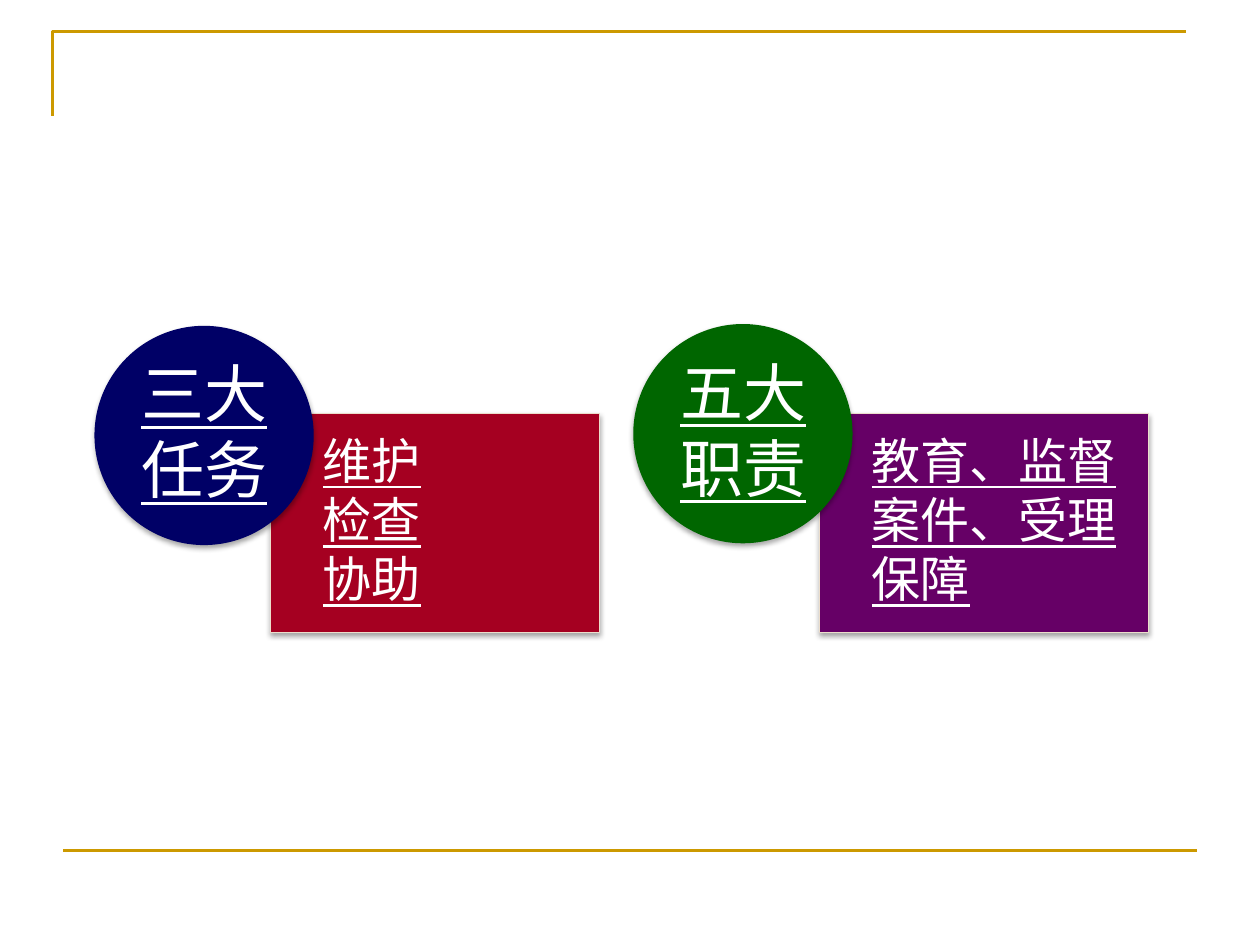
from lxml.etree import SubElement
from pptx import Presentation
from pptx.dml.color import RGBColor
from pptx.enum.shapes import MSO_CONNECTOR, MSO_SHAPE
from pptx.enum.text import MSO_ANCHOR, PP_ALIGN
from pptx.oxml.ns import qn
from pptx.util import Pt

COLORS = {
    "gold": "CC9900", "border": "ECDECC", "white": "FFFFFF", "shadow": "000000",
    "red": "A50021", "navy": "000066", "purple": "660066", "green": "006600",
}
FONT = "Noto Sans CJK SC"
DISC = 125.3
PANEL_WIDTH, PANEL_TOP = 188, 236.2


def color(name):
    """Return the named palette colour."""
    return RGBColor.from_string(COLORS[name])


def style_line(line, name, width):
    """Give a line its colour and width."""
    line.color.rgb = color(name)
    line.width = Pt(width)


def add_corner(slide):
    """Draw the open corner rule at the top left."""
    builder = slide.shapes.build_freeform(Pt(30), Pt(66.2))
    builder.add_line_segments([(Pt(30), Pt(18)), (Pt(678), Pt(18))], close=False)
    shape = builder.convert_to_shape()
    shape.shadow.inherit = False
    shape.fill.background()
    style_line(shape.line, "gold", 1.5)


def add_rule(slide):
    """Draw the horizontal rule at the foot."""
    rule = slide.shapes.add_connector(
        MSO_CONNECTOR.STRAIGHT, Pt(36), Pt(486), Pt(684), Pt(486))
    style_line(rule.line, "gold", 1.5)
    SubElement(rule._element.spPr, qn("a:effectLst"))


def add_shadow(shape):
    """Put a soft shadow below a shape."""
    shape.shadow.inherit = False
    effects = shape._element.spPr.find(qn("a:effectLst"))
    shadow = SubElement(effects, qn("a:outerShdw"), blurRad=str(Pt(3.1)),
                        dist=str(Pt(1.8)), dir="5400000", rotWithShape="0")
    shade = SubElement(shadow, qn("a:srgbClr"), val=COLORS["shadow"])
    SubElement(shade, qn("a:alpha"), val="35000")


def add_block(slide, kind, left, top, width, fill, border=None):
    """Draw a filled shape with a shadow and an optional border."""
    shape = slide.shapes.add_shape(kind, Pt(left), Pt(top), Pt(width), Pt(DISC))
    shape.fill.solid()
    shape.fill.fore_color.rgb = color(fill)
    if border:
        style_line(shape.line, border, 0.75)
    else:
        shape.line.fill.background()
    add_shadow(shape)


def add_text(slide, lines, left, top, width, height, size, align=PP_ALIGN.LEFT, inset=0):
    """Write underlined white lines, one paragraph each."""
    frame = slide.shapes.add_textbox(Pt(left), Pt(top), Pt(width), Pt(height)).text_frame
    frame.word_wrap = True
    frame.vertical_anchor = MSO_ANCHOR.MIDDLE
    frame.margin_left = 0
    frame.margin_top = frame.margin_right = frame.margin_bottom = Pt(inset)
    for index, line in enumerate(lines):
        paragraph = frame.add_paragraph() if index else frame.paragraphs[0]
        paragraph.alignment = align
        paragraph.line_spacing = 0.9
        paragraph.space_after = Pt(size / 8)
        run = paragraph.add_run()
        run.text = line
        run.font.size = Pt(size)
        run.font.name = FONT
        run.font.underline = True
        run.font.color.rgb = color("white")
        SubElement(run._r.get_or_add_rPr(), qn("a:ea"), typeface=FONT)


def add_panel(slide, left, fill, lines):
    """Draw a rectangle with its list of items."""
    add_block(slide, MSO_SHAPE.RECTANGLE, left, PANEL_TOP, PANEL_WIDTH, fill, "border")
    add_text(slide, lines, left + 30, PANEL_TOP, PANEL_WIDTH - 30, DISC, 28, inset=15.8)


def add_disc(slide, left, top, fill, lines):
    """Draw a circle with its centred heading."""
    margin = 18.3
    side = DISC - 2 * margin
    add_block(slide, MSO_SHAPE.OVAL, left, top, DISC, fill)
    add_text(slide, lines, left + margin, top + margin, side, side, 36, PP_ALIGN.CENTER)


def main():
    """Build the slide and save it."""
    presentation = Presentation()
    presentation.slide_width, presentation.slide_height = Pt(720), Pt(540)
    slide = presentation.slides.add_slide(presentation.slide_layouts[6])
    add_corner(slide)
    add_rule(slide)
    add_panel(slide, 154.6, "red", ["维护", "检查", "协助"])
    add_disc(slide, 54, 186.2, "navy", ["三大", "任务"])
    add_panel(slide, 468.3, "purple", ["教育、监督", "案件、受理", "保障"])
    add_disc(slide, 361.9, 185.2, "green", ["五大", "职责"])
    presentation.save("out.pptx")


if __name__ == "__main__":
    main()
